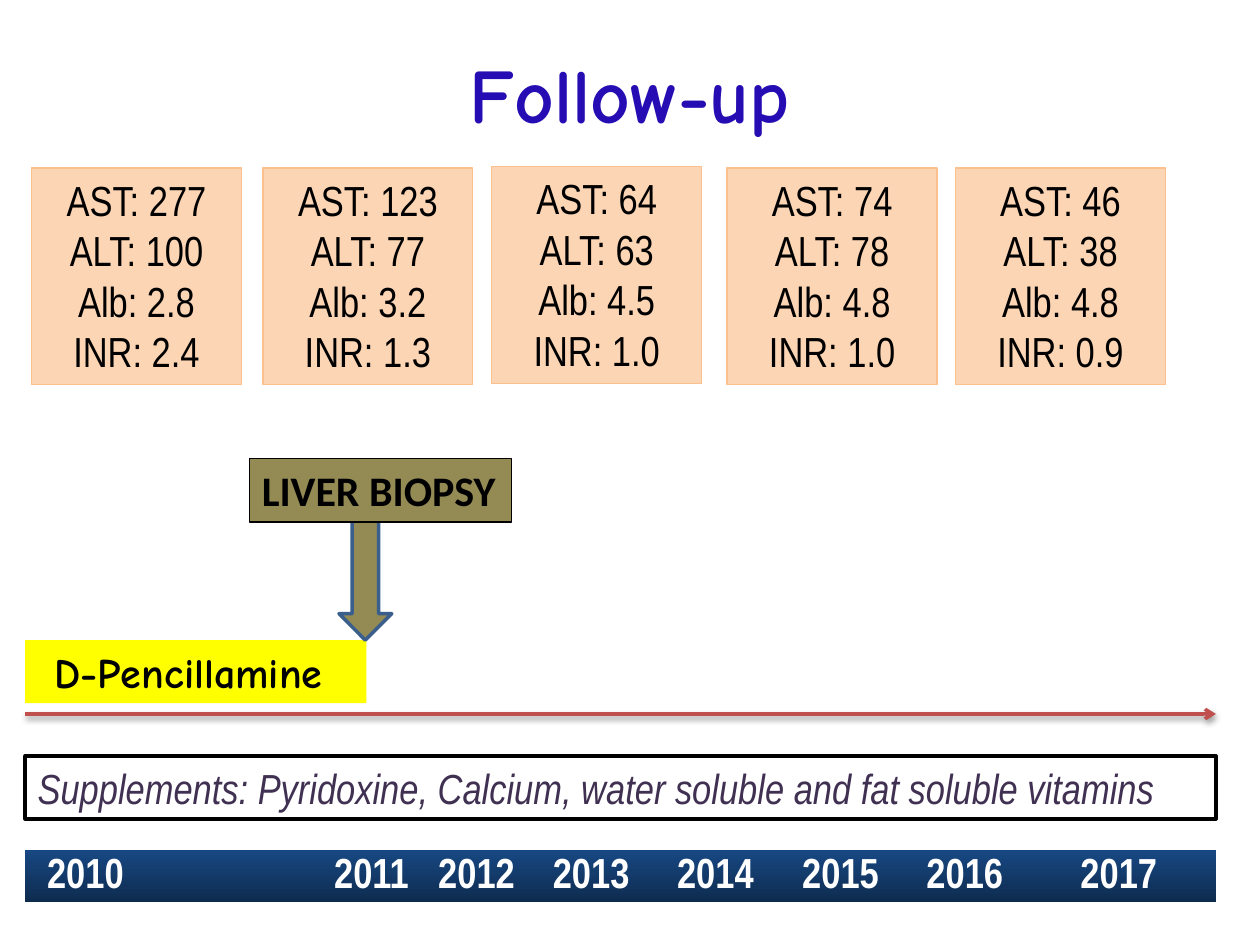
"""Build the follow-up timeline slide."""
from lxml import etree
from pptx import Presentation
from pptx.dml.color import RGBColor
from pptx.enum.shapes import MSO_CONNECTOR, MSO_SHAPE
from pptx.enum.text import MSO_ANCHOR, MSO_AUTO_SIZE, PP_ALIGN
from pptx.oxml import parse_xml
from pptx.oxml.ns import nsdecls, qn
from pptx.util import Pt

RECT, DOWN_ARROW = MSO_SHAPE.RECTANGLE, MSO_SHAPE.DOWN_ARROW
STRAIGHT = MSO_CONNECTOR.STRAIGHT
TOP, MIDDLE = MSO_ANCHOR.TOP, MSO_ANCHOR.MIDDLE
LEFT, CENTER = PP_ALIGN.LEFT, PP_ALIGN.CENTER
GROW, NO_FIT = MSO_AUTO_SIZE.SHAPE_TO_FIT_TEXT, MSO_AUTO_SIZE.NONE

NARROW, COMIC, SANS = "Arial Narrow", "Comic Neue", "Calibri"
BAR_LEFT, BAR_WIDTH = 14.4, 680.4
LABELS = ("AST", "ALT", "Alb", "INR")
PANELS = [
    (18, 96, ("277", "100", "2.8", "2.4")),
    (150.25, 96, ("123", "77", "3.2", "1.3")),
    (281, 95.25, ("64", "63", "4.5", "1.0")),
    (415.5, 96, ("74", "78", "4.8", "1.0")),
    (546, 96, ("46", "38", "4.8", "0.9")),
]
YEAR_TABS = (164, 223.5, 289, 360, 431.5, 502.5, 590.5)


def rgb(value):
    return RGBColor.from_string(value)


class Deck:
    def __init__(self, slide, size=24):
        self.s = slide
        self.size = size

    def format(self, tf, font, color, align, bold=False, italic=False, size=None):
        for p in tf.paragraphs:
            p.alignment = align
            for r in p.runs:
                r.font.name, r.font.size = font, Pt(size or self.size)
                r.font.bold, r.font.italic = bold, italic
                r.font.color.rgb = rgb(color)

    def title(self, text, box):
        sp = self.s.shapes.title
        sp.left, sp.top, sp.width, sp.height = map(Pt, box)
        tf = sp.text_frame
        tf.text = text
        tf.vertical_anchor, tf.auto_size = MIDDLE, NO_FIT
        self.format(tf, COMIC, "250DB3", CENTER, bold=True, size=44)

    def shape(self, kind, box, fill=None, line=None, weight=0.75):
        sp = self.s.shapes.add_shape(kind, *map(Pt, box))
        sp.shadow.inherit = False
        if fill:
            sp.fill.solid()
            sp.fill.fore_color.rgb = rgb(fill)
        if line:
            sp.line.color.rgb = rgb(line)
            sp.line.width = Pt(weight)
        else:
            sp.line.fill.background()
        return sp

    def box(self, text, box, font, color="000000", align=CENTER, fill=None,
            line=None, weight=0.75, bold=False, italic=False, wrap=True):
        sp = self.shape(RECT, box, fill, line, weight)
        tf = sp.text_frame
        tf.text = text
        tf.word_wrap, tf.auto_size, tf.vertical_anchor = wrap, GROW, TOP
        self.format(tf, font, color, align, bold, italic)
        return sp

    def year_bar(self, years, box, tabs):
        sp = self.box("\t".join(years), box, NARROW, "FFFFFF", LEFT, bold=True)
        sp.fill.gradient()
        sp.fill.gradient_angle = 90
        for stop, color in zip(sp.fill.gradient_stops, ("0E2B4E", "184884")):
            stop.color.rgb = rgb(color)
        sp.text_frame.margin_left = Pt(12.5)
        p = sp.text_frame.paragraphs[0]
        p.line_spacing = 0.8
        tab_list = etree.SubElement(p._p.get_or_add_pPr(), qn("a:tabLst"))
        for pos in tabs:
            etree.SubElement(tab_list, qn("a:tab"), pos=str(Pt(pos)), algn="l")

    def arrow(self, x1, x2, y, color, weight):
        cn = self.s.shapes.add_connector(STRAIGHT, Pt(x1), Pt(y), Pt(x2), Pt(y))
        cn.line.color.rgb = rgb(color)
        cn.line.width = Pt(weight)
        etree.SubElement(cn.line._get_or_add_ln(), qn("a:tailEnd"), type="arrow")
        cn._element.spPr.append(parse_xml(
            f'<a:effectLst {nsdecls("a")}>'
            f'<a:outerShdw blurRad="{Pt(3.1)}" dist="{Pt(1.6)}" dir="5400000" rotWithShape="0">'
            '<a:srgbClr val="000000"><a:alpha val="38000"/></a:srgbClr>'
            '</a:outerShdw></a:effectLst>'))


def main():
    prs = Presentation()
    prs.slide_width, prs.slide_height = Pt(720), Pt(540)
    deck = Deck(prs.slides.add_slide(prs.slide_layouts[5]))

    deck.title("Follow-up", (36, 21.6, 648, 62.6))
    deck.year_bar([str(year) for year in range(2010, 2018)],
                  (BAR_LEFT, 485.5, BAR_WIDTH, 30.2), YEAR_TABS)
    deck.box("D-Pencillamine ", (BAR_LEFT, 365.8, 195, 36), COMIC,
             fill="FFFF00", bold=True)
    deck.arrow(BAR_LEFT, BAR_LEFT + BAR_WIDTH, 408, "C0504D", 2)
    deck.box("Supplements: Pyridoxine, Calcium, water soluble and fat soluble vitamins",
             (BAR_LEFT, 432, BAR_WIDTH, 36), NARROW, "403152", LEFT,
             fill="FFFFFF", line="000000", weight=2, italic=True)
    for left, top, values in PANELS:
        text = "\n".join(f"{label}: {value}" for label, value in zip(LABELS, values))
        deck.box(text, (left, top, 120, 123.8), NARROW, fill="FCD5B5", line="FAC090")
    deck.shape(DOWN_ARROW, (193.7, 287.3, 30.2, 78.5), "948A54", "3A5F8C", 2)
    deck.box("LIVER BIOPSY", (142.5, 262, 149.8, 36.3), SANS, align=LEFT,
             fill="948A54", line="000000", bold=True, wrap=False)
    prs.save("out.pptx")


if __name__ == "__main__":
    main()
